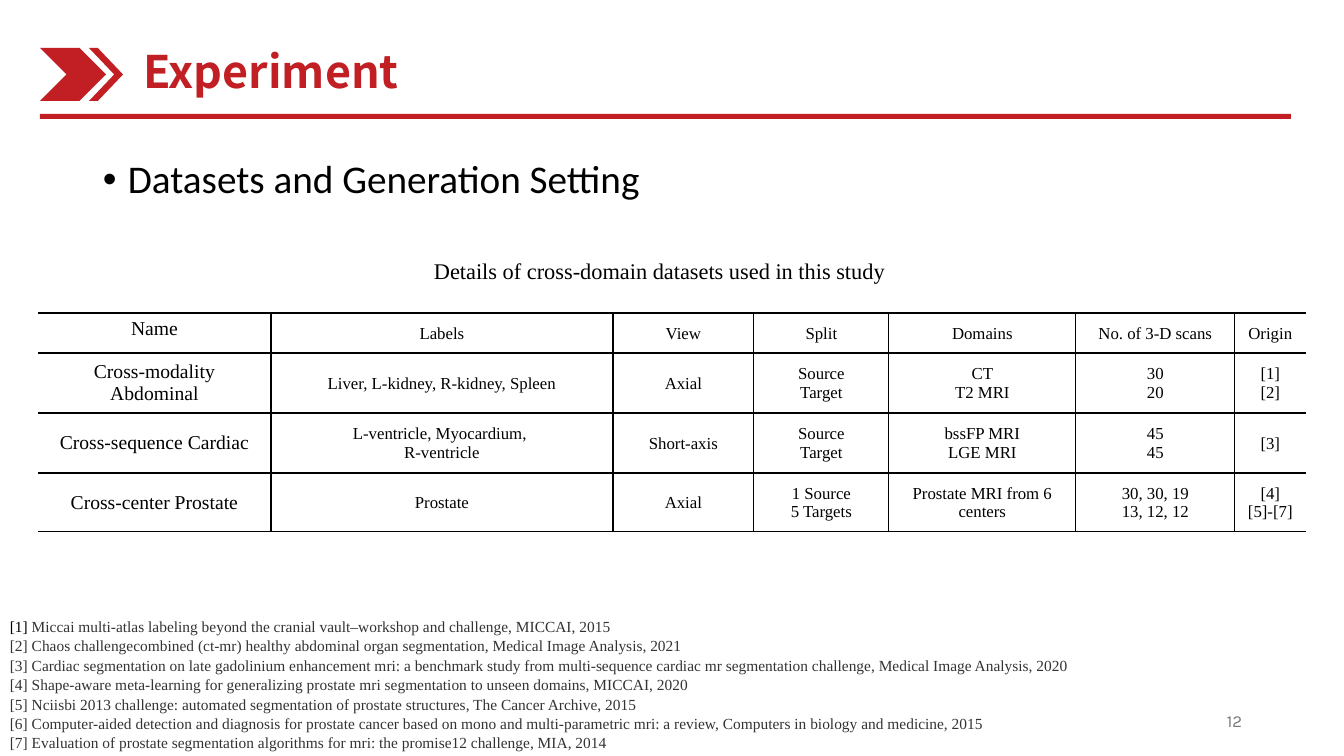
from dataclasses import dataclass

from lxml.etree import SubElement
from pptx import Presentation
from pptx.dml.color import RGBColor
from pptx.enum.shapes import MSO_SHAPE
from pptx.enum.text import MSO_ANCHOR, MSO_AUTO_SIZE, PP_ALIGN
from pptx.oxml import parse_xml
from pptx.oxml.ns import nsdecls, qn
from pptx.util import Pt

PX = 9071  # EMU per pixel at 100.8 pixels to the inch


@dataclass(frozen=True)
class Theme:
    red: str = "C11F23"
    black: str = "000000"
    dark: str = "333333"
    grey: str = "797979"
    title_font: str = "Noto Sans CJK SC"
    body_font: str = "Calibri"
    serif: str = "Times New Roman"
    number_font: str = "Karla"
    title: int = 32
    topic: int = 28
    caption: int = 16
    name: int = 14
    cell: int = 12
    reference: int = 11


theme = Theme()


def box(left, top, width, height):
    return [round(v * PX) for v in (left, top, width, height)]


def write(frame, text, *, size, font=theme.serif, color=theme.black, bold=False,
          align=PP_ALIGN.LEFT, anchor=MSO_ANCHOR.TOP, spacing=None, lead=0, lead_color=None):
    """Fill a text frame, one paragraph a line; the first `lead` characters may differ in colour."""
    frame.word_wrap = True
    frame.vertical_anchor = anchor
    for i, line in enumerate(text.split("\n")):
        paragraph = frame.paragraphs[0] if i == 0 else frame.add_paragraph()
        paragraph.alignment = align
        paragraph.line_spacing = spacing
        cut = lead if i == 0 else 0
        for part, part_color in ((line[:cut], lead_color), (line[cut:], color)):
            if part:
                run = paragraph.add_run()
                run.text = part
                run.font.size = Pt(size)
                run.font.name = font
                run.font.bold = bold
                run.font.color.rgb = RGBColor.from_string(part_color)
                SubElement(run.font._element, qn("a:ea")).set("typeface", font)


prs = Presentation()
prs.slide_width, prs.slide_height = 1344 * PX, 756 * PX
slide = prs.slides.add_slide(prs.slide_layouts[5])
shapes = slide.shapes

# Header: rule, double chevron and title
for preset, place, notch in (
    (MSO_SHAPE.RECTANGLE, (40, 114, 1251, 5), None),
    (MSO_SHAPE.CHEVRON, (40, 48, 66, 53), 0.5),
    (MSO_SHAPE.CHEVRON, (89, 48, 34, 53), 0.74),
):
    mark = shapes.add_shape(preset, *box(*place))
    mark.shadow.inherit = False
    mark.fill.solid()
    mark.fill.fore_color.rgb = RGBColor.from_string(theme.red)
    mark.line.fill.background()
    if notch:
        mark.adjustments[0] = notch

heading = shapes.title
heading.left, heading.top, heading.width, heading.height = box(133, 39, 476, 65)
heading.text_frame.auto_size = MSO_AUTO_SIZE.NONE
write(heading.text_frame, "Experiment", size=theme.title, font=theme.title_font,
      color=theme.red, bold=True)

# Topic bullet
topic = shapes.add_textbox(*box(93, 155, 1159, 526)).text_frame
write(topic, "Datasets and Generation Setting", size=theme.topic, font=theme.body_font, spacing=0.9)
bullet = topic.paragraphs[0]._p.get_or_add_pPr()
bullet.set("marL", str(25 * PX))
bullet.set("indent", str(-25 * PX))
SubElement(bullet, qn("a:buFont")).set("typeface", "Arial")
SubElement(bullet, qn("a:buChar")).set("char", "•")

# References, numbered in order
references = [
    "Miccai multi-atlas labeling beyond the cranial vault–workshop and challenge, MICCAI, 2015",
    "Chaos challengecombined (ct-mr) healthy abdominal organ segmentation, Medical Image Analysis, 2021",
    "Cardiac segmentation on late gadolinium enhancement mri: a benchmark study from multi-sequence "
    "cardiac mr segmentation challenge, Medical Image Analysis, 2020",
    "Shape-aware meta-learning for generalizing prostate mri segmentation to unseen domains, MICCAI, 2020",
    "Nciisbi 2013 challenge: automated segmentation of prostate structures, The Cancer Archive, 2015",
    "Computer-aided detection and diagnosis for prostate cancer based on mono and multi-parametric mri: "
    "a review, Computers in biology and medicine, 2015",
    "Evaluation of prostate segmentation algorithms for mri: the promise12 challenge, MIA, 2014",
]
numbered = "\n".join(f"[{i}] {reference}" for i, reference in enumerate(references, 1))
write(shapes.add_textbox(*box(0, 616, 1109, 141)).text_frame, numbered, size=theme.reference,
      color=theme.dark, anchor=MSO_ANCHOR.BOTTOM, spacing=1.05, lead=4, lead_color=theme.black)

# Dataset table
datasets = [
    ("Name", "Labels", "View", "Split", "Domains", "No. of 3-D scans", "Origin"),
    ("Cross-modality Abdominal", "Liver, L-kidney, R-kidney, Spleen", "Axial", "Source\nTarget",
     "CT\nT2 MRI", "30\n20", "[1]\n[2]"),
    ("Cross-sequence Cardiac", "L-ventricle, Myocardium, \nR-ventricle", "Short-axis",
     "Source\nTarget", "bssFP MRI\nLGE MRI", "45\n45", "[3]"),
    ("Cross-center Prostate", "Prostate", "Axial", "1 Source\n5 Targets",
     "Prostate MRI from 6 centers", "30, 30, 19\n13, 12, 12", "[4]\n[5]-[7]"),
]
column_widths = (233, 342, 141, 135, 187, 159, 71)
row_heights = (40, 60, 60, 59)
table = shapes.add_table(len(datasets), len(column_widths),
                         *box(38, 313, sum(column_widths), sum(row_heights))).table
table.first_row = table.horz_banding = False
for column, width in zip(table.columns, column_widths):
    column.width = width * PX
for row, height in zip(table.rows, row_heights):
    row.height = height * PX

last = len(column_widths) - 1
for r, record in enumerate(datasets):
    for c, text in enumerate(record):
        cell = table.cell(r, c)
        cell.fill.background()
        if c:
            cell.margin_left = cell.margin_right = cell.margin_top = PX
            cell.margin_bottom = 0
        write(cell.text_frame, text, size=theme.cell if c else theme.name, align=PP_ALIGN.CENTER)
        cell.vertical_anchor = MSO_ANCHOR.TOP if r == c == 0 else MSO_ANCHOR.MIDDLE
        # Rules on every side but the outer left and right
        open_side = {0: "L", last: "R"}.get(c)
        for i, side in enumerate("LRTB"):
            paint = ("<a:noFill/>" if side == open_side else
                     f'<a:solidFill><a:srgbClr val="{theme.black}"/></a:solidFill>')
            rule = parse_xml(f'<a:ln{side} {nsdecls("a")} w="{Pt(1)}">{paint}</a:ln{side}>')
            cell._tc.get_or_add_tcPr().insert(i, rule)

# Table caption and page number
write(shapes.add_textbox(*box(424, 252, 495, 37)).text_frame,
      "Details of cross-domain datasets used in this study",
      size=theme.caption, anchor=MSO_ANCHOR.BOTTOM)
write(shapes.add_textbox(*box(950, 701, 302, 40)).text_frame, "12", size=theme.cell,
      font=theme.number_font, color=theme.grey, align=PP_ALIGN.RIGHT, anchor=MSO_ANCHOR.MIDDLE)

prs.save("out.pptx")
